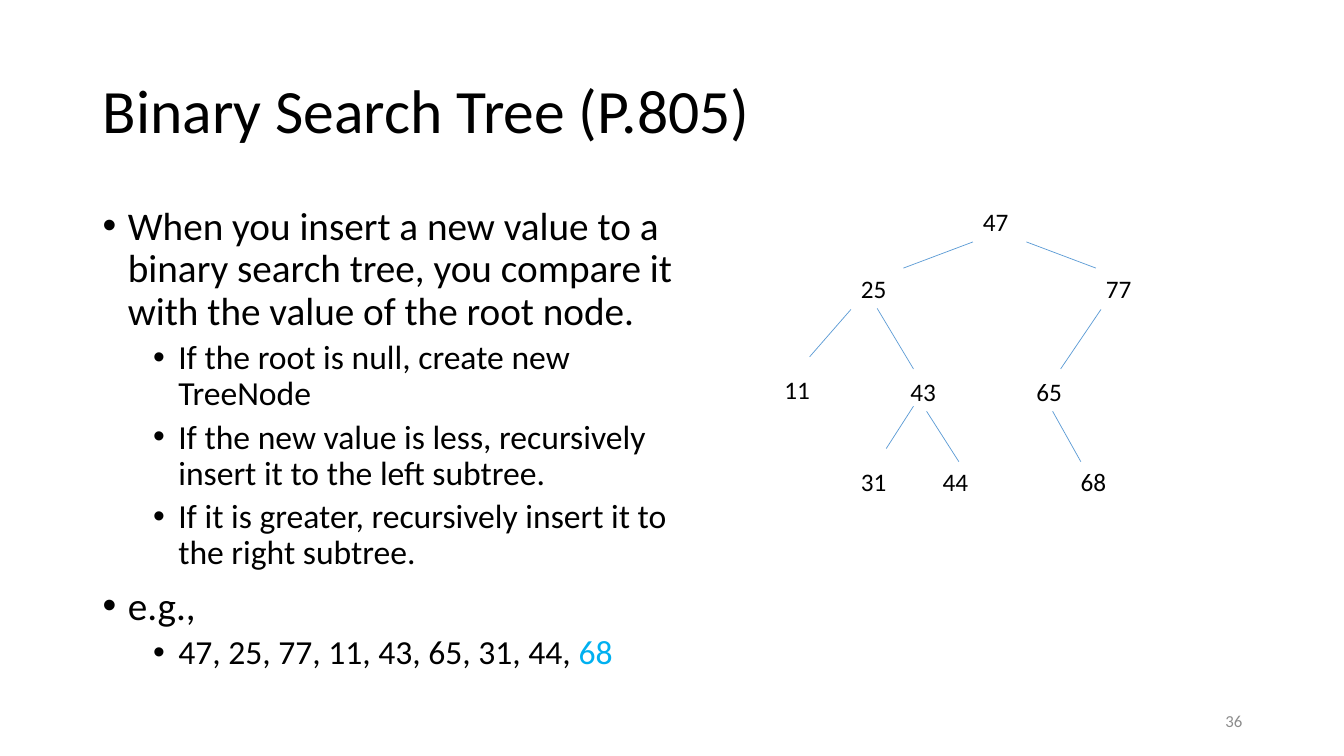
from lxml import etree
from pptx import Presentation
from pptx.dml.color import RGBColor
from pptx.enum.shapes import MSO_CONNECTOR
from pptx.enum.text import MSO_ANCHOR, MSO_AUTO_SIZE, PP_ALIGN
from pptx.oxml.ns import qn
from pptx.util import Inches, Pt

STRAIGHT = MSO_CONNECTOR.STRAIGHT
TOP, MIDDLE = MSO_ANCHOR.TOP, MSO_ANCHOR.MIDDLE
LEFT, RIGHT = PP_ALIGN.LEFT, PP_ALIGN.RIGHT
FIT_TEXT, NO_FIT = MSO_AUTO_SIZE.SHAPE_TO_FIT_TEXT, MSO_AUTO_SIZE.NONE
TOP_SIDE, BOTTOM_SIDE = 0, 2

FONT = "Calibri"
BLACK, GREY, BLUE, HIGHLIGHT = "000000", "8C8C8C", "5B9BD5", "00B0F0"
NODE_WIDTH, NODE_HEIGHT = 0.52, 0.4

# Level, then the text spans with their colours
POINTS = [
    (0, [("When you insert a new value to a binary search tree, "
          "you compare it with the value of the root node.", BLACK)]),
    (1, [("If the root is null, create new TreeNode", BLACK)]),
    (1, [("If the new value is less, recursively insert it to the left subtree.", BLACK)]),
    (1, [("If it is greater, recursively insert it to the right subtree.", BLACK)]),
    (0, [("e.g.,", BLACK)]),
    (1, [("47, 25, 77, 11, 43, 65, 31, 44, ", BLACK), ("68", HIGHLIGHT)]),
]

# Value: left, top
NODES = {
    47: (9.65, 2), 25: (8.44, 2.66), 77: (10.87, 2.66),
    11: (7.68, 3.66), 43: (8.93, 3.68), 65: (10.18, 3.68),
    31: (8.44, 4.58), 44: (9.25, 4.58), 68: (10.62, 4.58),
}

# Parent, child, start, end, whether each end meets the middle of a node's side
EDGES = [
    (47, 25, (9.65, 2.4), (8.96, 2.66), False, False),
    (47, 77, (10.18, 2.4), (10.87, 2.66), False, False),
    (25, 11, (8.44, 3.07), (8.03, 3.54), False, False),
    (25, 43, (8.7, 3.07), (9.06, 3.66), True, False),
    (77, 65, (10.92, 3.07), (10.52, 3.66), False, False),
    (43, 31, (9.06, 4.03), (8.79, 4.45), False, False),
    (43, 44, (9.2, 4.08), (9.51, 4.58), True, True),
    (65, 68, (10.44, 4.08), (10.72, 4.58), True, False),
]


def rgb(color):
    return RGBColor.from_string(color)


def add_span(para, text, size, color=BLACK):
    span = para.add_run()
    span.text = text
    span.font.name = FONT
    span.font.size = Pt(size)
    span.font.color.rgb = rgb(color)


def add_box(page, left, top, width, height, anchor=TOP, fit=NO_FIT):
    box = page.shapes.add_textbox(Inches(left), Inches(top), Inches(width), Inches(height))
    frame = box.text_frame
    frame.word_wrap = True
    frame.auto_size = fit
    frame.vertical_anchor = anchor
    return box


def add_text(page, text, *place, size=18, color=BLACK, align=LEFT,
             line_spacing=1.0, anchor=TOP, fit=NO_FIT):
    box = add_box(page, *place, anchor=anchor, fit=fit)
    para = box.text_frame.paragraphs[0]
    para.alignment = align
    para.line_spacing = line_spacing
    add_span(para, text, size, color)
    return box


def set_bullet(para, indent):
    properties = para._p.get_or_add_pPr()
    properties.set("marL", str(Inches(indent)))
    properties.set("indent", str(Inches(-0.25)))
    etree.SubElement(properties, qn("a:buFont")).set("typeface", "Arial")
    etree.SubElement(properties, qn("a:buChar")).set("char", "•")


def add_points(page, points, *place):
    frame = add_box(page, *place).text_frame
    for index, (level, spans) in enumerate(points):
        para = frame.add_paragraph() if index else frame.paragraphs[0]
        para.level = level
        para.line_spacing = 0.9
        para.space_before = Pt(5 if level else 10)
        set_bullet(para, 0.25 + 0.5 * level)
        for text, color in spans:
            add_span(para, text, 24 if level else 28, color)


def add_edge(page, start, end):
    points = [Inches(value) for value in (*start, *end)]
    edge = page.shapes.add_connector(STRAIGHT, *points)
    edge.line.color.rgb = rgb(BLUE)
    edge.line.width = Pt(0.5)
    etree.SubElement(edge._element.spPr, qn("a:effectLst"))
    return edge


def add_tree(page):
    nodes = {
        value: add_text(page, str(value), left, top, NODE_WIDTH, NODE_HEIGHT, fit=FIT_TEXT)
        for value, (left, top) in NODES.items()
    }
    for parent, child, start, end, joins_parent, joins_child in EDGES:
        edge = add_edge(page, start, end)
        if joins_parent:
            edge.begin_connect(nodes[parent], BOTTOM_SIDE)
        if joins_child:
            edge.end_connect(nodes[child], TOP_SIDE)


def main():
    deck = Presentation()
    deck.slide_width, deck.slide_height = Inches(13.33), Inches(7.5)
    page = deck.slides.add_slide(deck.slide_layouts[6])
    add_text(page, "Binary Search Tree (P.805)", 0.92, 0.4, 11.5, 1.45,
             size=44, line_spacing=0.9, anchor=MIDDLE)
    add_points(page, POINTS, 0.92, 2, 6.01, 4.76)
    add_text(page, "36", 9.42, 6.95, 3, 0.4,
             size=12, color=GREY, align=RIGHT, anchor=MIDDLE)
    add_tree(page)
    deck.save("out.pptx")


if __name__ == "__main__":
    main()
